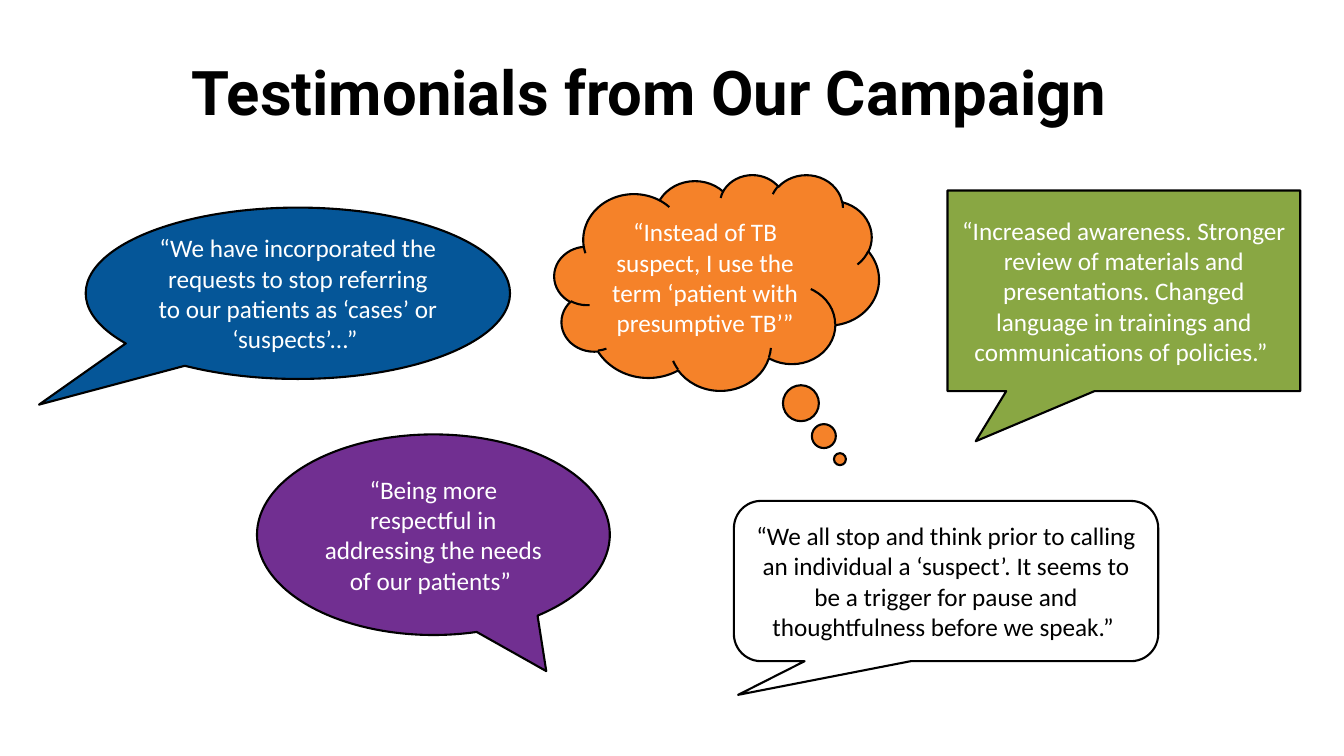
import dataclasses

import pptx
import pptx.dml.color
import pptx.enum.shapes
import pptx.enum.text
import pptx.util

Pt = pptx.util.Pt
Kind = pptx.enum.shapes.MSO_SHAPE


@dataclasses.dataclass
class Quote:
    kind: Kind
    box: tuple[float, float, float, float]
    tail: tuple[float, ...]
    fill: str
    ink: str
    text: str


QUOTES = [
    Quote(Kind.OVAL_CALLOUT, (61.2, 148.3, 303.1, 122.4), (-0.61, 0.65), "055698", "FFFFFF",
          "“We have incorporated the requests to stop referring to our patients as "
          "‘cases’ or ‘suspects’...” "),
    Quote(Kind.OVAL_CALLOUT, (183.6, 310.3, 252, 143.3), (0.32, 0.68), "712F91", "FFFFFF",
          "“Being more respectful in addressing the needs of our patients” "),
    Quote(Kind.CLOUD_CALLOUT, (396, 124.6, 231.8, 154.1), (0.38, 0.82), "F58229", "FFFFFF",
          "“Instead of TB suspect, I use the term ‘patient with presumptive TB’”"),
    Quote(Kind.RECTANGULAR_CALLOUT, (676.8, 136.1, 252, 143.3), (-0.42, 0.75), "89A743", "FFFFFF",
          "“Increased awareness. Stronger review of materials and presentations. "
          "Changed language in trainings and communications of policies.” "),
    Quote(Kind.ROUNDED_RECTANGULAR_CALLOUT, (524.2, 357.8, 303.1, 114.5), (-0.49, 0.71, 0.17),
          "FFFFFF", "000000",
          "“We all stop and think prior to calling an individual a ‘suspect’. It seems to "
          "be a trigger for pause and thoughtfulness before we speak.” "),
]


def tint(code: str) -> pptx.dml.color.RGBColor:
    return pptx.dml.color.RGBColor.from_string(code)


def write(shape, text: str, font: str, size: float, ink: str, bold: bool = False):
    frame = shape.text_frame
    frame.word_wrap = True
    frame.vertical_anchor = pptx.enum.text.MSO_ANCHOR.MIDDLE
    para = frame.paragraphs[0]
    para.alignment = pptx.enum.text.PP_ALIGN.CENTER
    run = para.add_run()
    run.text = text
    run.font.name = font
    run.font.size = Pt(size)
    run.font.bold = bold
    run.font.color.rgb = tint(ink)
    return para


def draw(slide, quote: Quote) -> None:
    shape = slide.shapes.add_shape(quote.kind, *map(Pt, quote.box))
    for spot, value in enumerate(quote.tail):
        shape.adjustments[spot] = value
    shape.shadow.inherit = False
    shape.fill.solid()
    shape.fill.fore_color.rgb = tint(quote.fill)
    shape.line.color.rgb = tint("000000")
    shape.line.width = Pt(1.5)
    write(shape, quote.text, "Calibri", 18, quote.ink)


def main() -> None:
    deck = pptx.Presentation()
    deck.slide_width, deck.slide_height = Pt(960), Pt(540)
    slide = deck.slides.add_slide(deck.slide_layouts[6])

    # Title
    title = slide.shapes.add_textbox(Pt(80.6), Pt(38.9), Pt(766.8), Pt(58.3))
    para = write(title, "Testimonials from Our Campaign", "Roboto", 44, "000000", True)
    para.line_spacing = 0.9

    # Speech and thought bubbles
    for quote in QUOTES:
        draw(slide, quote)

    deck.save("out.pptx")


if __name__ == "__main__":
    main()
